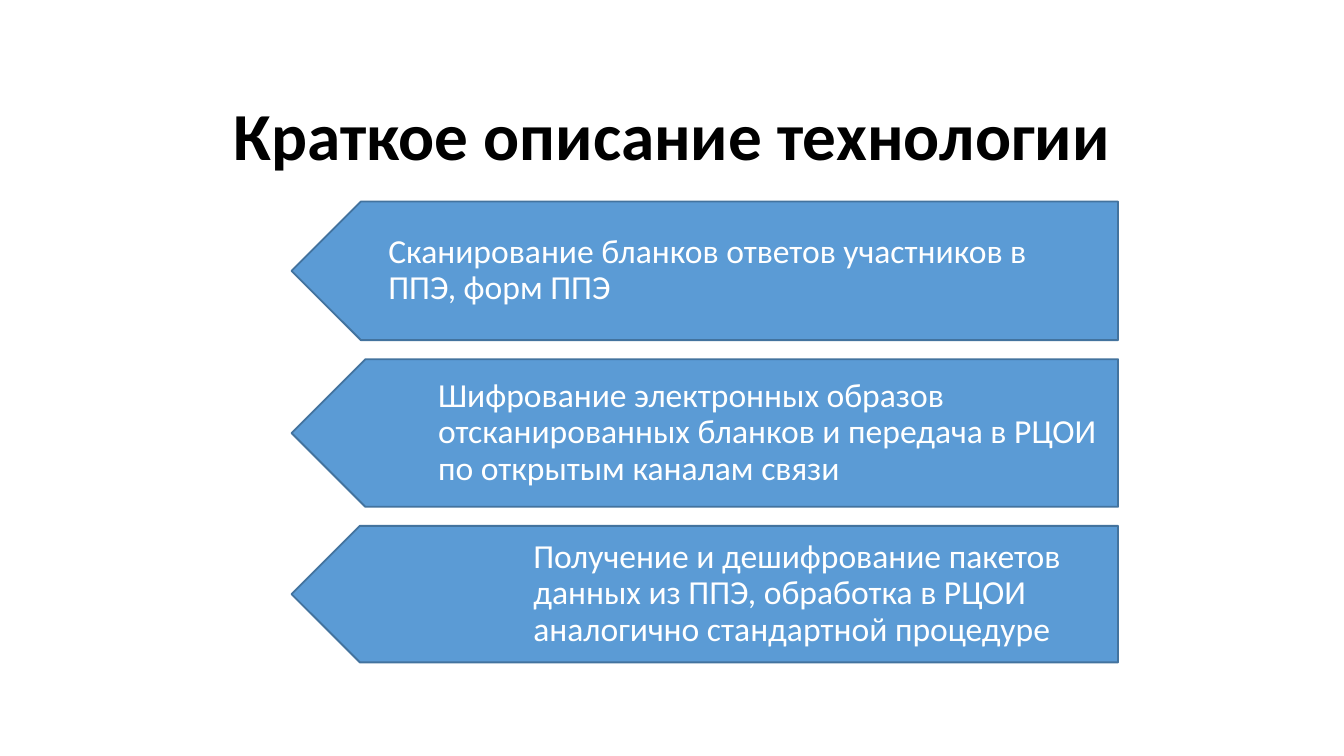
from dataclasses import dataclass

from pptx import Presentation
from pptx.dml.color import RGBColor
from pptx.enum.shapes import MSO_SHAPE
from pptx.enum.text import MSO_ANCHOR, MSO_AUTO_SIZE, PP_ALIGN
from pptx.util import Cm, Pt


@dataclass(frozen=True)
class Theme:
    font: str = "Calibri"
    title_size: int = 36
    body_size: int = 18
    title_color: str = "000000"
    body_color: str = "FFFFFF"
    arrow_fill: str = "5B9BD5"
    arrow_line: str = "43739E"
    line_width: int = 1
    line_spacing: float = 0.9


THEME = Theme()
TITLE = "Краткое описание технологии"
TITLE_BOX = (1.75, 1.42, 21.9, 2.39)
STEPS_BOX = (5.51, 3.81, 15.62, 8.71)
STEP_GAP = 0.36
STEPS = [
    ("Сканирование бланков ответов участников в ППЭ, форм ППЭ", 2.62, 0.66, 1.17),
    ("Шифрование электронных образов отсканированных бланков "
     "и передача в РЦОИ по открытым каналам связи", 2.79, 1.02, 1.75),
    ("Получение и дешифрование пакетов данных из ППЭ, "
     "обработка в РЦОИ аналогично стандартной процедуре", 2.58, 1.65, 2.92),
]


def set_attrs(obj, values):
    for name, value in values.items():
        setattr(obj, name, value)


def write_text(sp, text, size, color, align, bold, margins):
    left, top, right, bottom = (Cm(m) for m in margins)
    tf = sp.text_frame
    set_attrs(tf, {
        "text": text, "word_wrap": True, "auto_size": MSO_AUTO_SIZE.NONE,
        "vertical_anchor": MSO_ANCHOR.MIDDLE, "margin_left": left,
        "margin_top": top, "margin_right": right, "margin_bottom": bottom,
    })
    p = tf.paragraphs[0]
    set_attrs(p, {"alignment": align, "line_spacing": THEME.line_spacing})
    r = p.runs[0]
    set_attrs(r.font, {"name": THEME.font, "size": Pt(size), "bold": bold})
    r.font.color.rgb = RGBColor.from_string(color)


def add_title(s, box):
    sp = s.shapes.title
    set_attrs(sp, dict(zip(("left", "top", "width", "height"), map(Cm, box))))
    write_text(sp, TITLE, THEME.title_size, THEME.title_color,
               PP_ALIGN.CENTER, True, (0.18, 0.1, 0.18, 0.1))


def add_step(s, box, text, offset, indent):
    left, top, width, height = box
    group = s.shapes.add_group_shape()
    arrow = group.shapes.add_shape(MSO_SHAPE.PENTAGON, *map(Cm, box))
    arrow.rotation = 180
    arrow.shadow.inherit = False
    arrow.fill.solid()
    arrow.fill.fore_color.rgb = RGBColor.from_string(THEME.arrow_fill)
    arrow.line.color.rgb = RGBColor.from_string(THEME.arrow_line)
    arrow.line.width = Pt(THEME.line_width)
    label = group.shapes.add_textbox(
        Cm(left + offset), Cm(top), Cm(width - offset), Cm(height))
    write_text(label, text, THEME.body_size, THEME.body_color,
               PP_ALIGN.LEFT, False, (indent, 0.18, 0.36, 0.18))


def add_steps(s, box):
    left, top, width, _ = box
    for text, height, offset, indent in STEPS:
        add_step(s, (left, top, width, height), text, offset, indent)
        top += height + STEP_GAP


def main():
    prs = Presentation()
    set_attrs(prs, {"slide_width": Cm(25.4), "slide_height": Cm(14.29)})
    s = prs.slides.add_slide(prs.slide_layouts[5])
    add_title(s, TITLE_BOX)
    add_steps(s, STEPS_BOX)
    prs.save("out.pptx")


if __name__ == "__main__":
    main()
